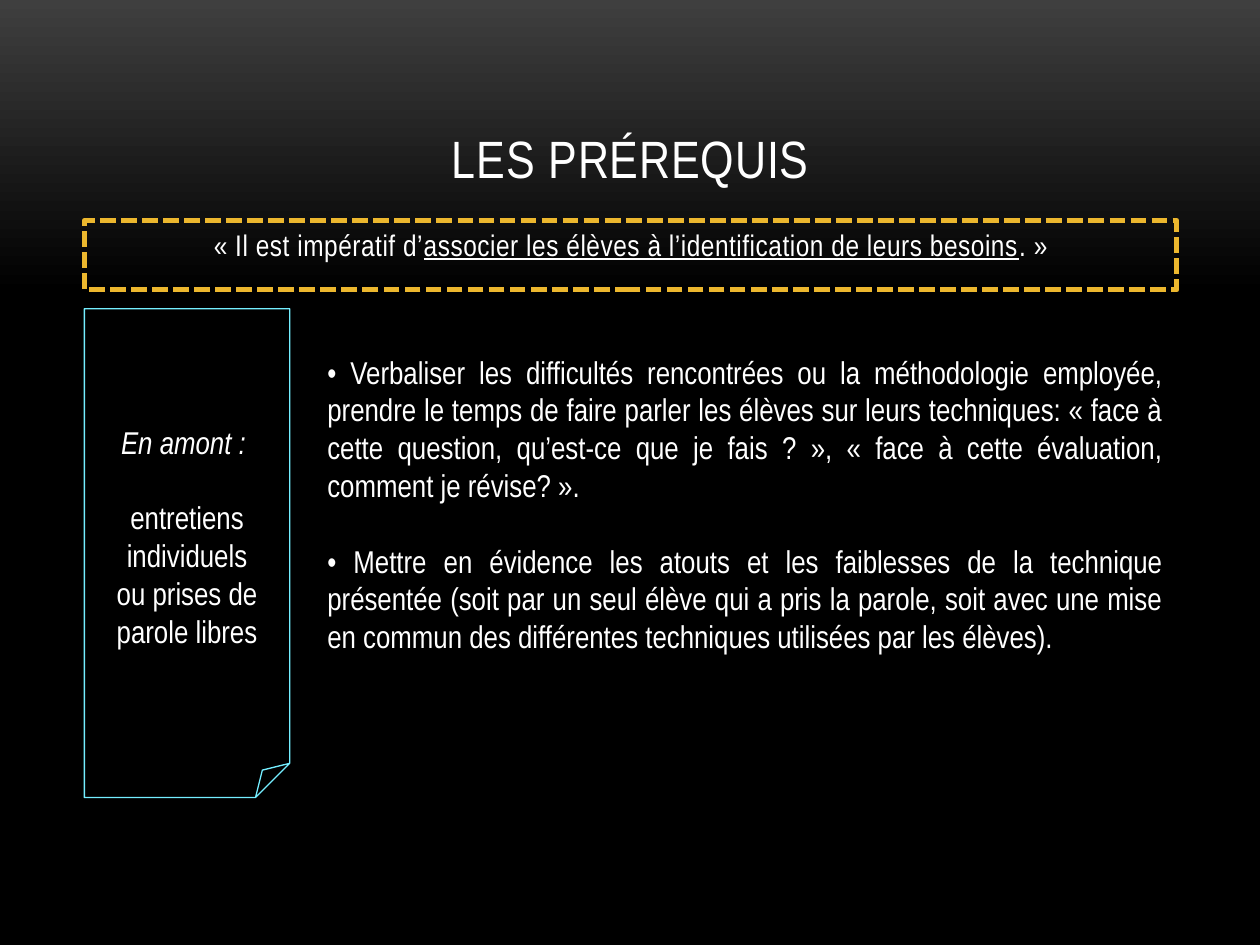
from dataclasses import dataclass

from pptx import Presentation
from pptx.dml.color import RGBColor
from pptx.enum.dml import MSO_LINE
from pptx.enum.shapes import MSO_SHAPE
from pptx.enum.text import MSO_ANCHOR, MSO_AUTO_SIZE, PP_ALIGN
from pptx.oxml.ns import qn
from pptx.util import Inches, Pt


@dataclass(frozen=True)
class Theme:
    font: str = "Arial Narrow"
    text: RGBColor = RGBColor(0xFF, 0xFF, 0xFF)
    glow: RGBColor = RGBColor(0x3F, 0x3F, 0x3F)
    dark: RGBColor = RGBColor(0, 0, 0)
    gold: RGBColor = RGBColor(0xEC, 0xB7, 0x2E)
    cyan: RGBColor = RGBColor(0x74, 0xEE, 0xFF)
    title_size: float = 30
    quote_size: float = 17
    body_size: float = 18
    body_gap: float = 21.6  # one line of body text


THEME = Theme()

QUOTE = [
    ("« Il est impératif d’", False),
    ("associer les élèves à l’identification de leurs besoins", True),
    (". »", False),
]
NOTE = ["En amont : ", "entretiens individuels", "ou prises de parole libres"]
POINTS = [
    "• Verbaliser les difficultés rencontrées ou la méthodologie employée, "
    "prendre le temps de faire parler les élèves sur leurs techniques: "
    "« face à cette question, qu’est-ce que je fais ? », "
    "« face à cette évaluation, comment je révise? ».",
    "• Mettre en évidence les atouts et les faiblesses de la technique "
    "présentée (soit par un seul élève qui a pris la parole, soit avec une "
    "mise en commun des différentes techniques utilisées par les élèves).",
]


def place(s, box):
    s.left, s.top, s.width, s.height = (Inches(v) for v in box)


def format_runs(p, size, align, spacing=0):
    """Style all runs of a paragraph; spacing is in points."""
    p.alignment = align
    for r in p.runs:
        r.font.name = THEME.font
        r.font.size = Pt(size)
        r.font.color.rgb = THEME.text
        if spacing:
            r._r.get_or_add_rPr().set("spc", str(int(spacing * 100)))


def fill_paragraphs(tf, texts, align):
    tf.word_wrap = True
    tf.text = "\n".join(texts)
    for p in tf.paragraphs:
        format_runs(p, THEME.body_size, align)
    tf.paragraphs[1].space_before = Pt(THEME.body_gap)


def paint_background(slide):
    fill = slide.background.fill
    fill.gradient()
    fill.gradient_angle = 270
    stops = [(0, THEME.glow), (0.31, THEME.dark)]
    for stop, (position, color) in zip(fill.gradient_stops, stops):
        stop.position = position
        stop.color.rgb = color


def add_title(slide, box):
    s = slide.shapes.title
    place(s, box)
    tf = s.text_frame
    tf.text = "LES PRÉREQUIS"
    tf.vertical_anchor = MSO_ANCHOR.BOTTOM
    tf.auto_size = MSO_AUTO_SIZE.NONE
    format_runs(tf.paragraphs[0], THEME.title_size, PP_ALIGN.CENTER, 0.5)


def add_quote(slide, box):
    s = slide.placeholders[1]
    place(s, box)
    s.line.color.rgb = THEME.gold
    s.line.width = Pt(3)
    s.line.dash_style = MSO_LINE.SQUARE_DOT
    tf = s.text_frame
    tf.auto_size = MSO_AUTO_SIZE.NONE
    p = tf.paragraphs[0]
    # Plain centred line: no bullet, no hanging indent
    pPr = p._p.get_or_add_pPr()
    pPr.set("marL", "0")
    pPr.set("indent", "0")
    pPr.append(pPr.makeelement(qn("a:buNone"), {}))
    for text, underlined in QUOTE:
        r = p.add_run()
        r.text = text
        r.font.underline = underlined
    p.space_before = Pt(0)
    p.space_after = Pt(6)
    format_runs(p, THEME.quote_size, PP_ALIGN.CENTER, 0.3)


def add_note(slide, box):
    s = slide.shapes.add_shape(MSO_SHAPE.FOLDED_CORNER, *map(Inches, box))
    s.shadow.inherit = False
    s.fill.background()
    s.line.color.rgb = THEME.cyan
    s.line.width = Pt(0.75)
    tf = s.text_frame
    tf.vertical_anchor = MSO_ANCHOR.MIDDLE
    fill_paragraphs(tf, NOTE, PP_ALIGN.CENTER)
    tf.paragraphs[0].runs[0].font.italic = True


def add_points(slide, box):
    s = slide.shapes.add_textbox(*map(Inches, box))
    fill_paragraphs(s.text_frame, POINTS, PP_ALIGN.JUSTIFY)


def main():
    prs = Presentation()
    prs.slide_width, prs.slide_height = Inches(10), Inches(7.5)
    slide = prs.slides.add_slide(prs.slide_layouts[1])
    left, width = 0.67, 8.67

    paint_background(slide)
    add_title(slide, (left, 0.3, width, 1.25))
    add_quote(slide, (left, 1.75, width, 0.55))
    add_note(slide, (left, 2.45, 1.63, 3.88))
    add_points(slide, (2.5, 2.75, 6.83, 2.83))
    prs.save("out.pptx")


if __name__ == "__main__":
    main()
